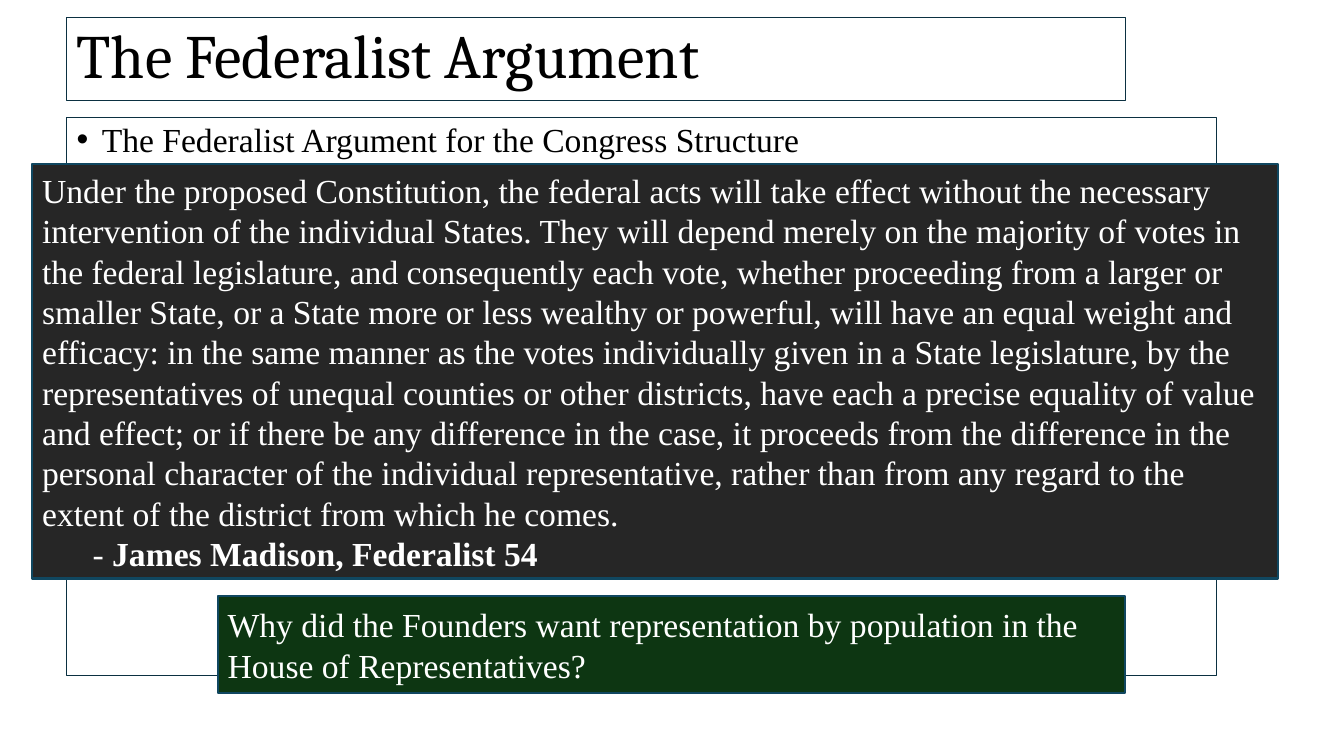
import pptx
import pptx.dml.color
import pptx.enum.shapes
import pptx.enum.text
import pptx.util

Inches = pptx.util.Inches
ALIGN = pptx.enum.text.PP_ALIGN
ANCHOR = pptx.enum.text.MSO_ANCHOR

THEME = {
    "paper": "FFFFFF", "ink": "000000", "edge": "0B3041",
    "quote": "262626", "ask": "0D3612", "trim": "104760", "light": "FFFFFF",
    "head font": "Cambria", "text font": "Times New Roman",
    "head size": 44, "text size": 24, "thin": 0.75, "thick": 1.5,
}

TITLE = "The Federalist Argument"
POINT = "The Federalist Argument for the Congress Structure"
QUOTE = (
    "Under the proposed Constitution, the federal acts will take effect without "
    "the necessary intervention of the individual States. They will depend merely "
    "on the majority of votes in the federal legislature, and consequently each "
    "vote, whether proceeding from a larger or smaller State, or a State more or "
    "less wealthy or powerful, will have an equal weight and efficacy: in the same "
    "manner as the votes individually given in a State legislature, by the "
    "representatives of unequal counties or other districts, have each a precise "
    "equality of value and effect; or if there be any difference in the case, it "
    "proceeds from the difference in the personal character of the individual "
    "representative, rather than from any regard to the extent of the district "
    "from which he comes."
)
SOURCE = "James Madison, Federalist 54"
ASK = ("Why did the Founders want representation by population in the "
       "House of Representatives?")

# Each paragraph is a list of (text, bold) runs.
PANELS = [
    ((0.32, 1.63, 12.36, 4.11), "quote",
     [[(QUOTE, False)], [("\t- ", False), (SOURCE, True)]]),
    ((2.16, 5.91, 9, 0.97), "ask", [[(ASK, False)]]),
]


def tint(name):
    return pptx.dml.color.RGBColor.from_string(THEME[name])


def dress(shape, box, fill, line, width, anchor):
    """Place a shape and set its fill, outline and text frame."""
    shape.left, shape.top, shape.width, shape.height = map(Inches, box)
    shape.fill.solid()
    shape.fill.fore_color.rgb = tint(fill)
    shape.line.color.rgb = tint(line)
    shape.line.width = pptx.util.Pt(THEME[width])
    frame = shape.text_frame
    frame.word_wrap = True
    frame.auto_size = pptx.enum.text.MSO_AUTO_SIZE.NONE
    frame.vertical_anchor = anchor
    return frame


def style(para, kind, ink):
    para.alignment = ALIGN.LEFT
    para.space_before = pptx.util.Pt(0)
    para.font.name = THEME[kind + " font"]
    para.font.size = pptx.util.Pt(THEME[kind + " size"])
    para.font.color.rgb = tint(ink)


def add_panel(slide, box, fill, paras):
    shape = slide.shapes.add_shape(
        pptx.enum.shapes.MSO_SHAPE.RECTANGLE, *map(Inches, box))
    shape.shadow.inherit = False
    frame = dress(shape, box, fill, "trim", "thick", ANCHOR.MIDDLE)
    for i, runs in enumerate(paras):
        para = frame.add_paragraph() if i else frame.paragraphs[0]
        for text, bold in runs:
            run = para.add_run()
            run.text = text
            if bold:
                run.font.bold = True
        style(para, "text", "light")


def main():
    deck = pptx.Presentation()
    deck.slide_width, deck.slide_height = Inches(13.33), Inches(7.5)
    slide = deck.slides.add_slide(deck.slide_layouts[1])

    holders = [
        (slide.shapes.title, (0.66, 0.17, 10.5, 0.83), TITLE, "head", ANCHOR.MIDDLE),
        (slide.placeholders[1], (0.66, 1.17, 11.41, 5.53), POINT, "text", ANCHOR.TOP),
    ]
    for shape, box, text, kind, anchor in holders:
        frame = dress(shape, box, "paper", "edge", "thin", anchor)
        frame.text = text
        para = frame.paragraphs[0]
        para.line_spacing = 0.9
        if kind == "text":
            props = para._p.get_or_add_pPr()
            props.set("marL", str(Inches(0.25)))
            props.set("indent", str(-Inches(0.25)))
        style(para, kind, "ink")

    for box, fill, paras in PANELS:
        add_panel(slide, box, fill, paras)
    deck.save("out.pptx")


if __name__ == "__main__":
    main()
